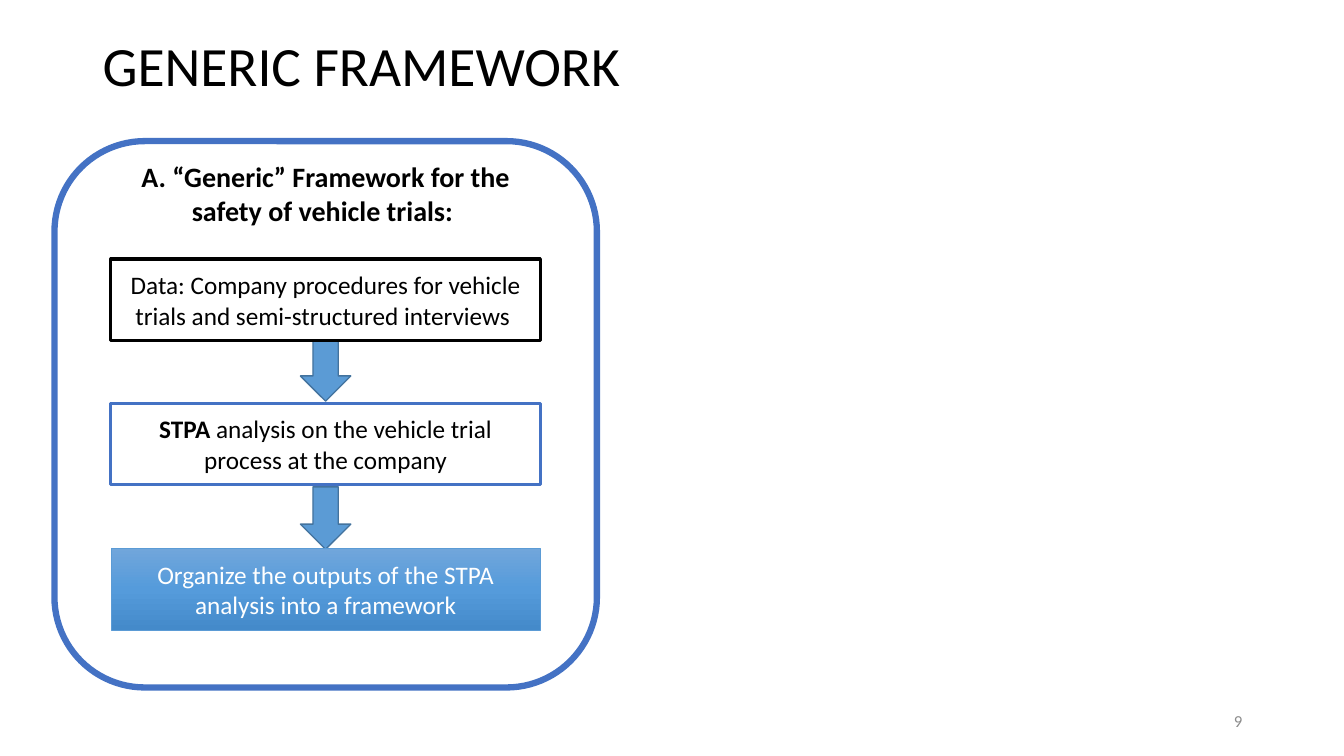
import copy
import pptx
import pptx.util
import pptx.dml.color
import pptx.enum.shapes
import pptx.enum.text
import pptx.oxml.ns

PX = 9144
SHAPES = pptx.enum.shapes.MSO_SHAPE
ALIGN = pptx.enum.text.PP_ALIGN
BLUE = "4472C4"
SKY = "5B9BD5"


def color(value):
    return pptx.dml.color.RGBColor.from_string(value)


def add_box(kind, place, fill=None, line=None, width=0, spans=(), size=18,
            ink="000000", align=ALIGN.CENTER):
    box = page.shapes.add_shape(kind, *[n * PX for n in place]) if kind else \
        page.shapes.add_textbox(*[n * PX for n in place])
    if kind:
        box.shadow.inherit = False
    if fill:
        box.fill.solid()
        box.fill.fore_color.rgb = color(fill)
    else:
        box.fill.background()
    if line:
        box.line.color.rgb = color(line)
        box.line.width = pptx.util.Pt(width)
    frame = box.text_frame
    frame.word_wrap = True
    frame.vertical_anchor = pptx.enum.text.MSO_ANCHOR.MIDDLE
    para = frame.paragraphs[0]
    para.alignment = align
    for text, bold in spans:
        span = para.add_run()
        span.text = text
        span.font.name = "Calibri"
        span.font.size = pptx.util.Pt(size)
        span.font.bold = bold
        span.font.color.rgb = color(ink)
    return box


deck = pptx.Presentation()
deck.slide_width = 1333 * PX
deck.slide_height = 750 * PX
page = deck.slides.add_slide(deck.slide_layouts[6])

add_box(SHAPES.ROUNDED_RECTANGLE, (54, 140, 538, 542), line=BLUE, width=4.5)

title = add_box(None, (92, 40, 1150, 56), spans=[("GENERIC FRAMEWORK", False)],
                size=39.6, align=ALIGN.LEFT)
title.text_frame.paragraphs[0].line_spacing = 0.9

add_box(None, (110, 151, 426, 81), size=20,
        spans=[("A. “Generic” Framework for the safety of vehicle trials: ", True)])

for top, height in [(338, 60), (483, 62)]:
    add_box(SHAPES.DOWN_ARROW, (298, top, 50, height), SKY, "43739E", 1)

steps = [
    (257, "FFFFFF", "000000", 2.25, "000000",
     [("Data: Company procedures for vehicle trials and semi-structured interviews ", False)]),
    (400, "FFFFFF", BLUE, 2.25, "000000",
     [("STPA", True), (" analysis on the vehicle trial process at the company", False)]),
    (544, SKY, SKY, 0.5, "FFFFFF",
     [("Organize the outputs of the STPA analysis into a framework", False)]),
]
for top, fill, line, width, ink, spans in steps:
    step = add_box(SHAPES.RECTANGLE, (110, top, 426, 81), fill, line, width, spans, ink=ink)

step.fill.gradient()
step.fill.gradient_angle = 270
stop_list = step._element.spPr.find(".//" + pptx.oxml.ns.qn("a:gsLst"))
stop_list.append(copy.deepcopy(stop_list[-1]))
shades = [(0, "71A6DB"), (0.5, "559BDB"), (1, "448ACA")]
for stop, (position, shade) in zip(step.fill.gradient_stops, shades):
    stop.position = position
    stop.color.rgb = color(shade)

add_box(None, (942, 695, 300, 40), spans=[("9", False)], size=12, ink="8C8C8C",
        align=ALIGN.RIGHT)

deck.save("out.pptx")
